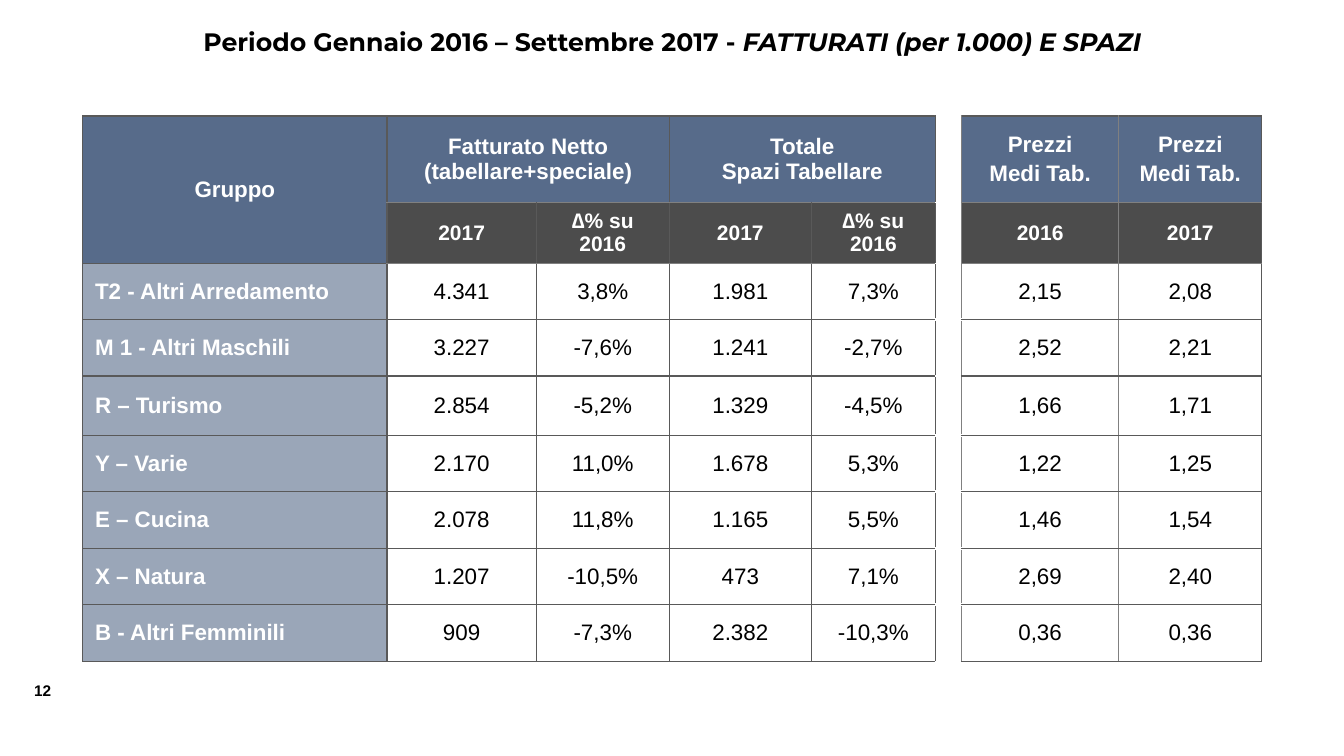
"""Builds the slide of net revenue, advertising space and average prices by group."""
from dataclasses import dataclass

from lxml.etree import SubElement
from pptx import Presentation
from pptx.dml.color import RGBColor as Rgb
from pptx.enum.text import MSO_ANCHOR as Anchor, MSO_AUTO_SIZE as AutoSize, PP_ALIGN as Align
from pptx.oxml.ns import qn
from pptx.util import Pt

COLORS = {"black": "000000", "white": "FFFFFF", "blue": "576B8A",
          "dark_line": "595959", "grey_line": "808080"}
FORMATS = {
    "title": {"name": "Montserrat", "size": Pt(18), "bold": True, "italic": False},
    "title_topic": {"name": "Montserrat", "size": Pt(18), "bold": True, "italic": True},
    "number": {"name": "Arial", "size": Pt(11), "bold": True},
    "heading": {"name": "Arial", "size": Pt(16), "bold": True},
    "year": {"name": "Arial", "size": Pt(15), "bold": True},
    "value": {"name": "Arial", "size": Pt(16), "bold": False},
}
COLUMN_WIDTHS = [217.44, 106.56, 95.04, 101.52, 88.56, 18.72, 112.32, 102.24]
ROW_HEIGHTS = [61.92, 43.2, 40.32, 40.32, 42.48, 40.32, 40.32, 40.32, 40.32]
GAP_COLUMN = 5
HEADER_ROWS = 2
YEARS = ["2017", "∆% su 2016", "2017", "∆% su 2016", "", "2016", "2017"]
GROUPS = [
    ["T2 - Altri Arredamento", "4.341", "3,8%", "1.981", "7,3%", "", "2,15", "2,08"],
    ["M 1 - Altri Maschili", "3.227", "-7,6%", "1.241", "-2,7%", "", "2,52", "2,21"],
    ["R – Turismo", "2.854", "-5,2%", "1.329", "-4,5%", "", "1,66", "1,71"],
    ["Y – Varie", "2.170", "11,0%", "1.678", "5,3%", "", "1,22", "1,25"],
    ["E – Cucina", "2.078", "11,8%", "1.165", "5,5%", "", "1,46", "1,54"],
    ["X – Natura", "1.207", "-10,5%", "473", "7,1%", "", "2,69", "2,40"],
    ["B - Altri Femminili", "909", "-7,3%", "2.382", "-10,3%", "", "0,36", "0,36"],
]


@dataclass(frozen=True)
class CellLook:
    """Format, colours and inner margins shared by one kind of cell."""
    format: str
    ink: str
    fill: str | None = None
    opacity: int = 100
    side: float = 0
    edge: float = 0
    align: Align = Align.CENTER


@dataclass(frozen=True)
class Heading:
    """Top heading with its column, the cells it spans and its line spacing."""
    column: int
    lines: tuple[str, ...]
    rows: int = 1
    columns: int = 1
    space: float = 0


@dataclass(frozen=True)
class Caption:
    """Text outside the table, as runs of text and format name."""
    left: float
    top: float
    width: float
    height: float
    runs: tuple[tuple[str, str], ...]
    align: Align
    wrap: bool


LOOKS = {
    "heading": CellLook("heading", "white", "blue", side=7.2, edge=3.6),
    "year": CellLook("year", "white", "black", 70, 7.2, 3.6),
    "group": CellLook("heading", "white", "blue", 60, 8.9, align=Align.LEFT),
    "value": CellLook("value", "black"),
    "gap": CellLook("value", "black", "white"),
}
HEADINGS = [
    Heading(0, ("Gruppo",), rows=2),
    Heading(1, ("Fatturato Netto (tabellare+speciale)",), columns=2),
    Heading(3, ("Totale", "Spazi Tabellare"), columns=2),
    Heading(6, ("Prezzi", "Medi Tab."), space=3.2),
    Heading(7, ("Prezzi", "Medi Tab."), space=3.2),
]
CAPTIONS = [
    Caption(17.28, 483.12, 30.24, 20.88, (("12", "number"),), Align.LEFT, False),
    Caption(113.76, 15.12, 732.96, 28.8,
            (("Periodo Gennaio 2016 – Settembre 2017 - ", "title"),
             ("FATTURATI (per 1.000) E SPAZI", "title_topic")), Align.CENTER, True),
]


def add_text(paragraph, text: str, format_name: str, ink: str) -> None:
    """Add a run in a named format."""
    run = paragraph.add_run()
    run.text = text
    for attribute, value in FORMATS[format_name].items():
        setattr(run.font, attribute, value)
    run.font.color.rgb = Rgb.from_string(COLORS[ink])


def add_caption(slide, caption: Caption) -> None:
    """Place a caption on the slide."""
    box = slide.shapes.add_textbox(Pt(caption.left), Pt(caption.top),
                                   Pt(caption.width), Pt(caption.height))
    frame = box.text_frame
    frame.word_wrap = caption.wrap
    frame.auto_size = AutoSize.SHAPE_TO_FIT_TEXT
    paragraph = frame.paragraphs[0]
    paragraph.alignment = caption.align
    for text, format_name in caption.runs:
        add_text(paragraph, text, format_name, "black")


def horizontal_line(line: int, column: int) -> tuple[str, float]:
    """Give colour and width of the line above row number line."""
    if column == GAP_COLUMN:
        inner = HEADER_ROWS < line < len(ROW_HEIGHTS)
        return "white", 2.25 if inner else 1
    return ("grey_line" if column and line in (1, HEADER_ROWS) else "dark_line"), 1


def vertical_line(line: int) -> tuple[str, float]:
    """Give colour and width of the line left of column number line."""
    return ("grey_line" if line in (GAP_COLUMN + 1, GAP_COLUMN + 2) else "dark_line"), 1


def draw_borders(cell, row: int, column: int) -> None:
    """Draw the four borders of a cell."""
    borders = {"a:lnL": vertical_line(column), "a:lnR": vertical_line(column + 1),
               "a:lnT": horizontal_line(row, column),
               "a:lnB": horizontal_line(row + 1, column)}
    properties = cell._tc.get_or_add_tcPr()
    for tag, (color, width) in borders.items():
        border = SubElement(properties, qn(tag), w=str(Pt(width)))
        solid = SubElement(border, qn("a:solidFill"))
        SubElement(solid, qn("a:srgbClr"), val=COLORS[color])


def style_cell(cell, look: CellLook) -> None:
    """Set the fill, margins and anchor of a cell."""
    margins = {"margin_left": Pt(look.side), "margin_right": Pt(look.side),
               "margin_top": Pt(look.edge), "margin_bottom": Pt(look.edge),
               "vertical_anchor": Anchor.MIDDLE}
    for attribute, value in margins.items():
        setattr(cell, attribute, value)
    if look.fill is None:
        cell.fill.background()
        return
    cell.fill.solid()
    cell.fill.fore_color.rgb = Rgb.from_string(COLORS[look.fill])
    if look.opacity < 100:
        color = cell._tc.tcPr.find(qn("a:solidFill"))[0]
        SubElement(color, qn("a:alpha"), val=str(look.opacity * 1000))


def fill_cell(cell, lines: tuple[str, ...], look: CellLook, space: float = 0) -> None:
    """Write one paragraph for each line of a cell."""
    for index, line in enumerate(lines):
        frame = cell.text_frame
        paragraph = frame.add_paragraph() if index else frame.paragraphs[0]
        paragraph.alignment = look.align
        if index and space:
            paragraph.space_before = Pt(space)
        add_text(paragraph, line, look.format, look.ink)


def look_of(row: int, column: int) -> CellLook:
    """Choose the look of a cell from its place."""
    if column == GAP_COLUMN:
        return LOOKS["gap"]
    if row == 0 or (row < HEADER_ROWS and column == 0):
        return LOOKS["heading"]
    if row < HEADER_ROWS:
        return LOOKS["year"]
    return LOOKS["value" if column else "group"]


def add_revenue_table(slide) -> None:
    """Build the table of revenue, space and prices."""
    table = slide.shapes.add_table(len(ROW_HEIGHTS), len(COLUMN_WIDTHS), Pt(59.04), Pt(82.8),
                                   Pt(sum(COLUMN_WIDTHS)), Pt(sum(ROW_HEIGHTS))).table
    table.first_row = table.horz_banding = False
    for column, width in enumerate(COLUMN_WIDTHS):
        table.columns[column].width = Pt(width)
    texts = [[""] * len(COLUMN_WIDTHS), ["", *YEARS], *GROUPS]
    for row, height in enumerate(ROW_HEIGHTS):
        table.rows[row].height = Pt(height)
        for column, text in enumerate(texts[row]):
            cell, look = table.cell(row, column), look_of(row, column)
            draw_borders(cell, row, column)
            style_cell(cell, look)
            if text:
                fill_cell(cell, (text,), look)
    for heading in HEADINGS:
        cell = table.cell(0, heading.column)
        if heading.rows * heading.columns > 1:
            cell.merge(table.cell(heading.rows - 1, heading.column + heading.columns - 1))
        fill_cell(cell, heading.lines, LOOKS["heading"], heading.space)


def main() -> None:
    """Build and save the slide."""
    deck = Presentation()
    deck.slide_width, deck.slide_height = Pt(960), Pt(540)
    slide = deck.slides.add_slide(deck.slide_layouts[6])
    for caption in CAPTIONS:
        add_caption(slide, caption)
    add_revenue_table(slide)
    deck.save("out.pptx")


if __name__ == "__main__":
    main()
